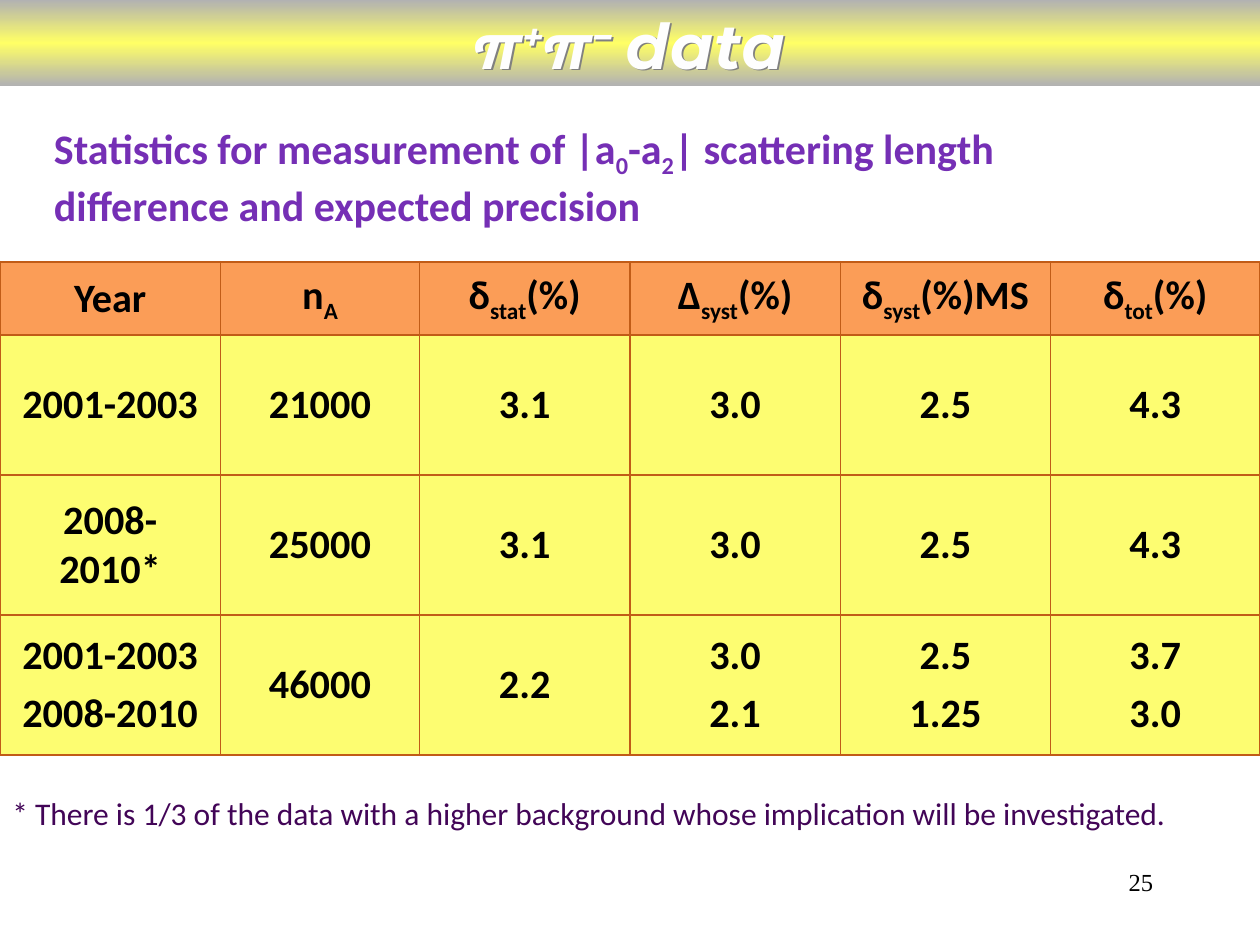
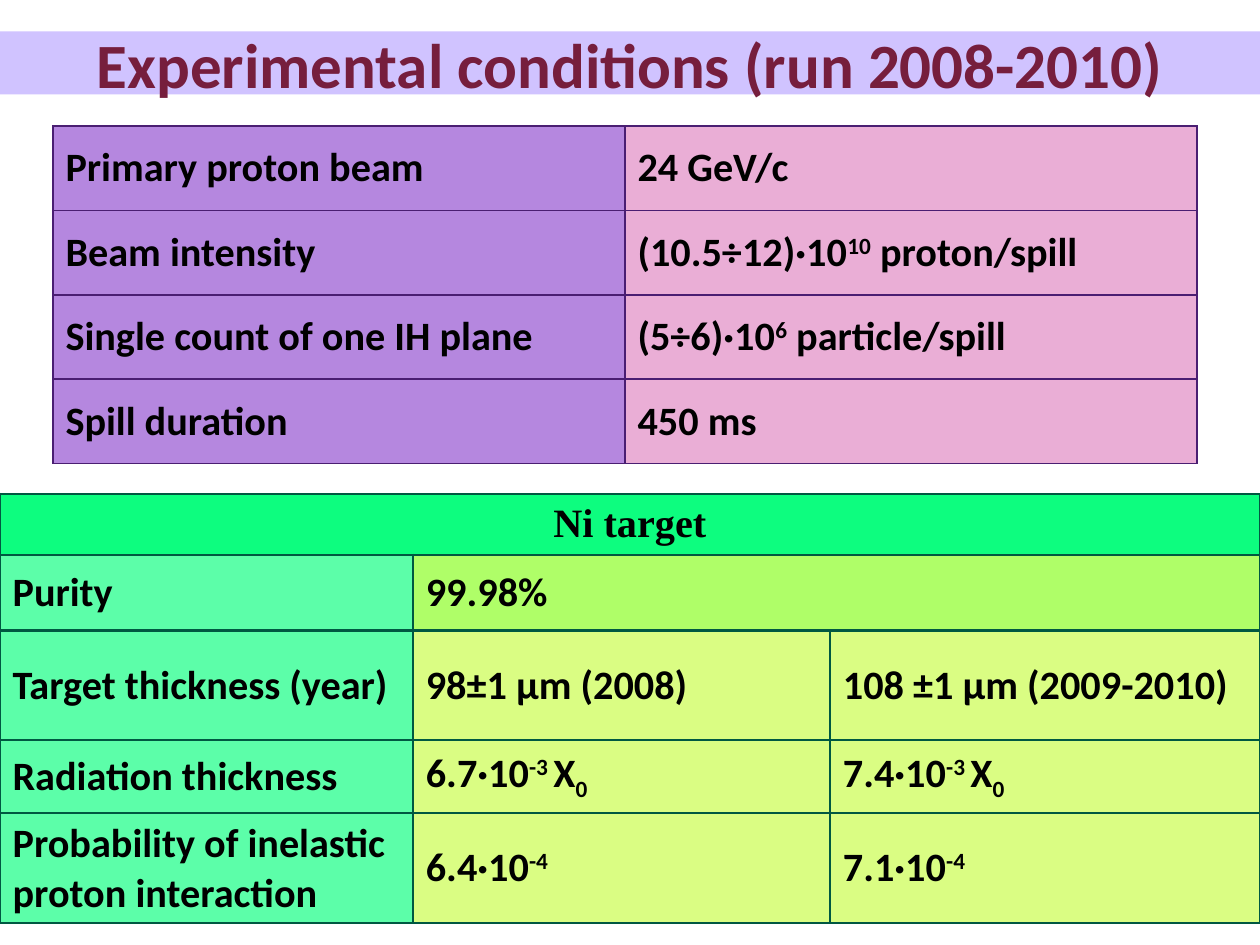
import copy

import lxml.etree
import pptx
import pptx.dml.color
import pptx.enum.shapes
import pptx.enum.text
import pptx.oxml.ns
import pptx.util

Inches = pptx.util.Inches
Pt = pptx.util.Pt
RGBColor = pptx.dml.color.RGBColor
Align = pptx.enum.text.PP_ALIGN
Anchor = pptx.enum.text.MSO_ANCHOR
qn = pptx.oxml.ns.qn

BLACK = RGBColor(0x00, 0x00, 0x00)
NEAR_WHITE = RGBColor(0xFE, 0xFE, 0xFE)
OUTLINE_BLUE = RGBColor(0x1C, 0x1C, 0xB5)
SHADOW_GREY = RGBColor(0x80, 0x80, 0x80)
BAND_GREY = RGBColor(0xB2, 0xB2, 0xB2)
BAND_YELLOW = RGBColor(0xFF, 0xFF, 0x66)
PURPLE = RGBColor(0x75, 0x2F, 0xB5)
DARK_PURPLE = RGBColor(0x42, 0x05, 0x57)
RUST = RGBColor(0xC1, 0x5C, 0x17)
ORANGE = RGBColor(0xFB, 0x9D, 0x57)
YELLOW = RGBColor(0xFD, 0xFD, 0x71)
LILAC = RGBColor(0xD0, 0xC3, 0xFF)
WINE = RGBColor(0x76, 0x1E, 0x3D)
INDIGO = RGBColor(0x4A, 0x1E, 0x72)
VIOLET = RGBColor(0xB5, 0x87, 0xDF)
PINK = RGBColor(0xEA, 0xAE, 0xD6)
DARK_GREEN = RGBColor(0x00, 0x58, 0x41)
GREEN = RGBColor(0x0D, 0xFD, 0x7F)
MINT = RGBColor(0x5C, 0xFE, 0xA9)
LIME = RGBColor(0xAF, 0xFE, 0x68)
PALE_LIME = RGBColor(0xDA, 0xFD, 0x83)

BODY_FONT = "Calibri"
SERIF_FONT = "Times New Roman"
TITLE_FONT = "Montserrat"
TITLE_SIZE = 36
TABLE_SIZE = 23
SLIDE_WIDTH = 10
BASELINES = {"_": "-25000", "^": "30000"}


def add_spans(para, text):
    for index, piece in enumerate(text.replace("}", "{").split("{")):
        if not piece:
            continue
        span = para.add_run()
        if index % 2:
            span.text = piece[1:]
            span._r.get_or_add_rPr().set("baseline", BASELINES[piece[0]])
        else:
            span.text = piece


def write(frame, text, size, color, bold=False, font=BODY_FONT,
          align=Align.LEFT, before=0):
    for index, line in enumerate(text.split("\n")):
        para = frame.add_paragraph() if index else frame.paragraphs[0]
        para.alignment = align
        para.space_before = Pt(before)
        para.font.size = Pt(size)
        para.font.name = font
        para.font.bold = bold
        para.font.color.rgb = color
        add_spans(para, line)


def add_label(page, box, text, size, color, **style):
    label = page.shapes.add_textbox(*map(Inches, box))
    label.text_frame.word_wrap = True
    write(label.text_frame, text, size, color, **style)
    return label


def add_band(page, top, height):
    band = page.shapes.add_shape(
        pptx.enum.shapes.MSO_SHAPE.RECTANGLE,
        0, Inches(top), Inches(SLIDE_WIDTH), Inches(height))
    band.shadow.inherit = False
    band.line.fill.background()
    return band


def add_color(parent, color):
    lxml.etree.SubElement(parent, qn("a:srgbClr"), val=str(color))


def set_border(cell, side, color, width):
    line = lxml.etree.SubElement(
        cell._tc.get_or_add_tcPr(), qn(f"a:ln{side}"), w=str(Pt(width)))
    add_color(lxml.etree.SubElement(line, qn("a:solidFill")), color)


def add_grid(page, box, widths, heights, texts, fills, border,
             inner=1, outer=1, align=Align.LEFT):
    table = page.shapes.add_table(
        len(heights), len(widths), *map(Inches, box)).table
    table.first_row = table.horz_banding = False
    for column, width in zip(table.columns, widths):
        column.width = Inches(width)
    for row, height in zip(table.rows, heights):
        row.height = Inches(height)
    last_row, last_column = len(heights) - 1, len(widths) - 1
    for r, (row_texts, row_fills) in enumerate(zip(texts, fills)):
        last_text = len(row_texts) - 1
        for c in range(len(widths)):
            cell = table.cell(r, c)
            edges = {"L": c == 0, "R": c == last_column,
                     "T": r == 0, "B": r == last_row}
            for side, is_outer in edges.items():
                set_border(cell, side, border, outer if is_outer else inner)
            cell.fill.solid()
            cell.fill.fore_color.rgb = row_fills[min(c, last_text)]
            cell.vertical_anchor = Anchor.MIDDLE
            if c <= last_text:
                write(cell.text_frame, row_texts[c], TABLE_SIZE, BLACK,
                      bold=True, align=align, before=TABLE_SIZE * 0.2)
        if last_text < last_column:
            table.cell(r, last_text).merge(table.cell(r, last_column))
    return table


def add_gradient_title(page, text):
    band = add_band(page, 0, 0.68)
    band.fill.gradient()
    band.fill.gradient_angle = 90
    stops = band._element.spPr.find(".//" + qn("a:gsLst"))
    stops.insert(1, copy.deepcopy(stops[0]))
    colors = (BAND_GREY, BAND_YELLOW, BAND_GREY)
    for index, (stop, color) in enumerate(zip(band.fill.gradient_stops, colors)):
        stop.position = index / 2
        stop.color.rgb = color

    title = add_label(page, (3.5, 0, 3, 0.56), text, TITLE_SIZE, NEAR_WHITE,
                      bold=True, font=TITLE_FONT, align=Align.CENTER)
    effects = lxml.etree.SubElement(title._element.spPr, qn("a:effectLst"))
    shadow = lxml.etree.SubElement(
        effects, qn("a:outerShdw"), dist=str(Pt(1.5)), dir="2700000")
    add_color(shadow, SHADOW_GREY)

    para = title.text_frame.paragraphs[0]
    para.font.italic = True
    for span in para.runs:
        span.font.color.rgb = NEAR_WHITE
        props = span._r.get_or_add_rPr()
        props.set("spc", "50")
        outline = lxml.etree.Element(qn("a:ln"), w=str(Pt(1)))
        add_color(lxml.etree.SubElement(outline, qn("a:solidFill")), OUTLINE_BLUE)
        props.insert(0, outline)


def build_data_page(page):
    add_label(page, (0.33, 0.92, 9.08, 0.9),
              "Statistics for measurement of |a{_0}-a{_2}| scattering length "
              "difference and expected precision", 24, PURPLE, bold=True)
    texts = [
        ["Year", "n{_A}", "δ{_stat}(%)", "Δ{_syst}(%)", "δ{_syst}(%)MS",
         "δ{_tot}(%)"],
        ["2001-2003", "21000", "3.1", "3.0", "2.5", "4.3"],
        ["2008-2010*", "25000", "3.1", "3.0", "2.5", "4.3"],
        ["2001-2003\n2008-2010", "46000", "2.2", "3.0\n2.1", "2.5\n1.25",
         "3.7\n3.0"],
    ]
    add_grid(page, (0, 2.08, SLIDE_WIDTH, 3.92),
             [1.75, 1.58] + [1.67] * 3 + [1.66], [0.58] + [1.11] * 3, texts,
             [[ORANGE] * 6] + [[YELLOW] * 6] * 3, RUST,
             outer=1.5, align=Align.CENTER)
    add_label(page, (0, 6.25, SLIDE_WIDTH, 0.4),
              "* There is 1/3 of the data with a higher background whose "
              "implication will be investigated.", 18, DARK_PURPLE)
    add_gradient_title(page, "π{^+}π{^− }data")
    add_label(page, (7.17, 6.83, 2.08, 0.5), "25", 14, BLACK,
              font=SERIF_FONT, align=Align.RIGHT)


def build_conditions_page(page):
    band = add_band(page, 0.25, 0.5)
    band.fill.solid()
    band.fill.fore_color.rgb = LILAC
    band.text_frame.word_wrap = True
    band.text_frame.vertical_anchor = Anchor.MIDDLE
    write(band.text_frame, "Experimental conditions (run 2008-2010)",
          TITLE_SIZE, WINE, bold=True, align=Align.CENTER)

    beam = [
        ["Primary proton beam", "24 GeV/c"],
        ["Beam intensity", "(10.5÷12)·10{^10} proton/spill"],
        ["Single count of one IH plane", "(5÷6)·10{^6} particle/spill"],
        ["Spill duration", "450 ms"],
    ]
    add_grid(page, (0.42, 1, 9.08, 2.67), [4.54] * 2, [0.67] * 4, beam,
             [[VIOLET, PINK]] * 4, INDIGO)

    target = [
        ["Ni target"],
        ["Purity", "99.98%"],
        ["Target thickness (year)", "98±1 μm (2008)", "108 ±1 μm (2009-2010)"],
        ["Radiation thickness", "6.7·10{^-3 }X{_0}", "7.4·10{^-3 }X{_0}"],
        ["Probability of inelastic proton interaction", "6.4·10{^-4}",
         "7.1·10{^-4}"],
    ]
    table = add_grid(page, (0, 3.92, SLIDE_WIDTH, 3.4), [3.28, 3.31, 3.41],
                     [0.48, 0.6, 0.87, 0.58, 0.87], target,
                     [[GREEN], [MINT, LIME]] + [[MINT, PALE_LIME, PALE_LIME]] * 3,
                     DARK_GREEN, inner=1.5, outer=1.5)
    heading = table.cell(0, 0).text_frame.paragraphs[0]
    heading.alignment = Align.CENTER
    heading.font.name = SERIF_FONT


def main():
    deck = pptx.Presentation()
    deck.slide_width = Inches(SLIDE_WIDTH)
    deck.slide_height = Inches(7.5)
    for build in (build_data_page, build_conditions_page):
        build(deck.slides.add_slide(deck.slide_layouts[6]))
    deck.save("out.pptx")


if __name__ == "__main__":
    main()
